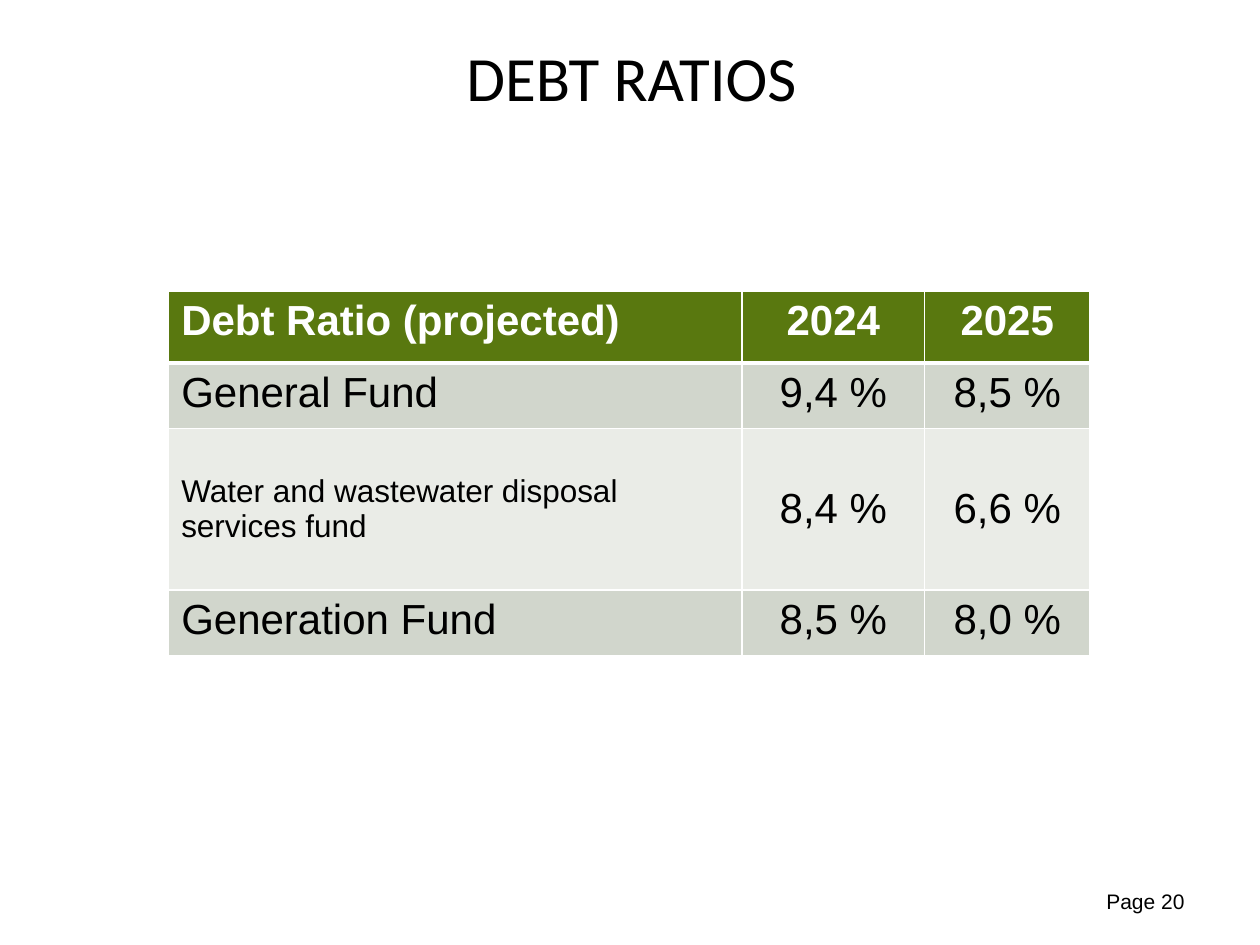
"""Build the debt ratios slide."""
from lxml import etree
from pptx import Presentation
from pptx import util as u
from pptx.dml.color import RGBColor
from pptx.enum import text
from pptx.oxml import ns

BLACK, WHITE, GREEN = "000000", "FFFFFF", "59780F"
BANDS = ["D1D6CC", "EAECE7"]
LEFT, CENTER, RIGHT = text.PP_ALIGN.LEFT, text.PP_ALIGN.CENTER, text.PP_ALIGN.RIGHT
TOP, MIDDLE = text.MSO_ANCHOR.TOP, text.MSO_ANCHOR.MIDDLE

LABELS = [
    ("DEBT RATIOS", (1.3, 0.74, 22.86, 1.6), CENTER, {"name": "Calibri", "size": u.Pt(36)}),
    ("Page 20", (18.21, 17.65, 5.92, 1.02), RIGHT, {"name": "Arial", "size": u.Pt(12)}),
]
ROWS = [
    ("Debt Ratio (projected)", "2024", "2025"),
    ("General Fund", "9,4 %", "8,5 %"),
    ("Water and wastewater disposal services fund", "8,4 %", "6,6 %"),
    ("Generation Fund", "8,5 %", "8,0 %"),
]
TABLE_LEFT, TABLE_TOP = 3.4, 5.87
COL_WIDTHS = [11.56, 3.68, 3.33]
ROW_HEIGHTS = [1.45, 1.32, 3.25, 1.32]
HEADER_ROW, TALL_ROW = 0, 2


def rgb(value):
    return RGBColor.from_string(value)


def write(tf, words, align, color, formats):
    p = tf.paragraphs[0]
    p.alignment = align
    r = p.add_run()
    r.text = words
    r.font.color.rgb = rgb(color)
    for key, value in formats.items():
        setattr(r.font, key, value)


def set_borders(cell, widths):
    tc_pr = cell._tc.get_or_add_tcPr()
    for i, (side, width) in enumerate(widths.items()):
        ln = etree.Element(ns.qn(f"a:ln{side}"), w=str(u.Pt(width)))
        fill = etree.SubElement(ln, ns.qn("a:solidFill"))
        etree.SubElement(fill, ns.qn("a:srgbClr"), val=WHITE)
        tc_pr.insert(i, ln)


def add_label(s, words, box, align, formats):
    tf = s.shapes.add_textbox(*map(u.Cm, box)).text_frame
    tf.word_wrap = True
    tf.vertical_anchor = MIDDLE
    write(tf, words, align, BLACK, formats)


def add_ratio_table(s):
    size = sum(COL_WIDTHS), sum(ROW_HEIGHTS)
    frame = s.shapes.add_table(len(ROWS), len(COL_WIDTHS),
                               *map(u.Cm, (TABLE_LEFT, TABLE_TOP, *size)))
    table = frame.table
    for col, width in zip(table.columns, COL_WIDTHS):
        col.width = u.Cm(width)
    for i, (row, height) in enumerate(zip(ROWS, ROW_HEIGHTS)):
        table.rows[i].height = u.Cm(height)
        header = i == HEADER_ROW
        for j, words in enumerate(row):
            cell = table.cell(i, j)
            cell.fill.solid()
            cell.fill.fore_color.rgb = rgb(GREEN if header else BANDS[(i - 1) % 2])
            cell.vertical_anchor = MIDDLE if i == TALL_ROW else TOP
            small = i == TALL_ROW and j == 0
            formats = {"name": "Arial", "size": u.Pt(18 if small else 24), "bold": header}
            write(cell.text_frame, words, CENTER if j else LEFT,
                  WHITE if header else BLACK, formats)
            set_borders(cell, {"L": 1, "R": 1, "T": 3 if i == HEADER_ROW + 1 else 1,
                               "B": 3 if header else 1})


def main():
    prs = Presentation()
    prs.slide_width, prs.slide_height = u.Cm(25.4), u.Cm(19.05)
    s = prs.slides.add_slide(prs.slide_layouts[6])
    for label in LABELS:
        add_label(s, *label)
    add_ratio_table(s)
    prs.save("out.pptx")


if __name__ == "__main__":
    main()
